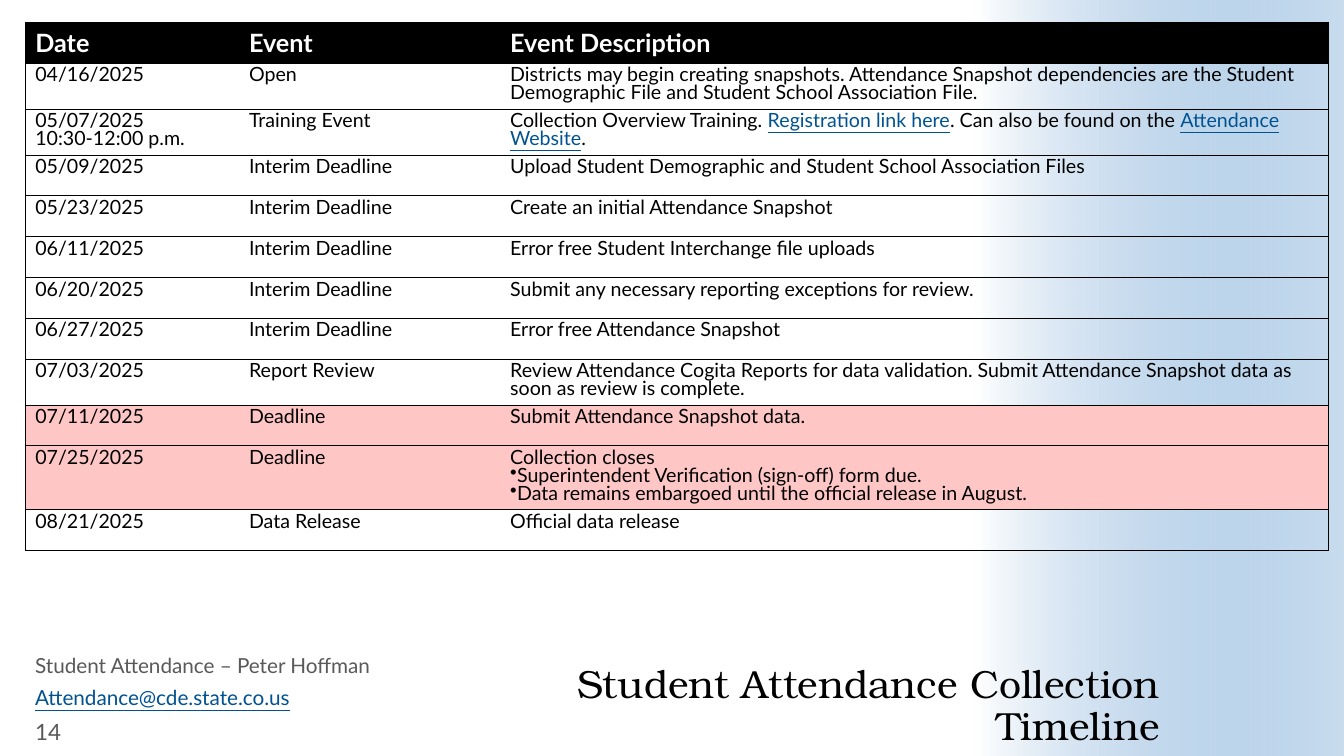
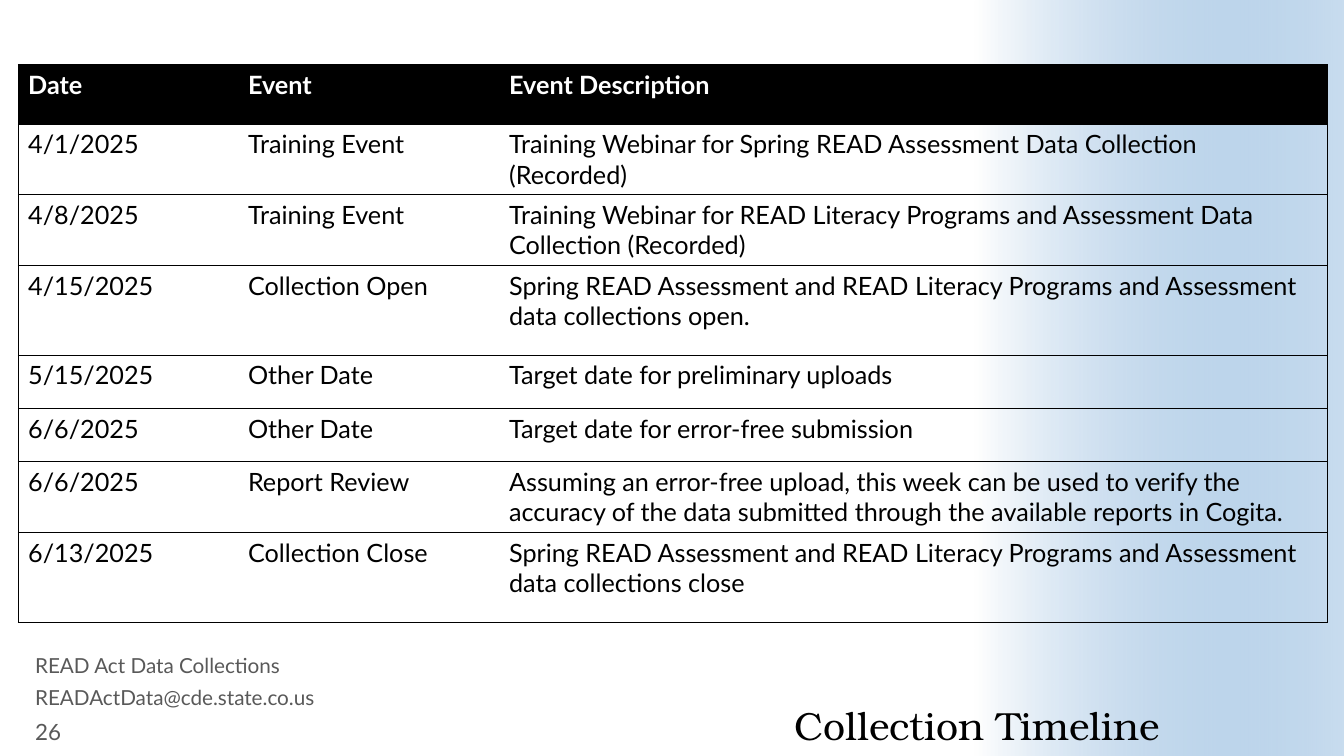
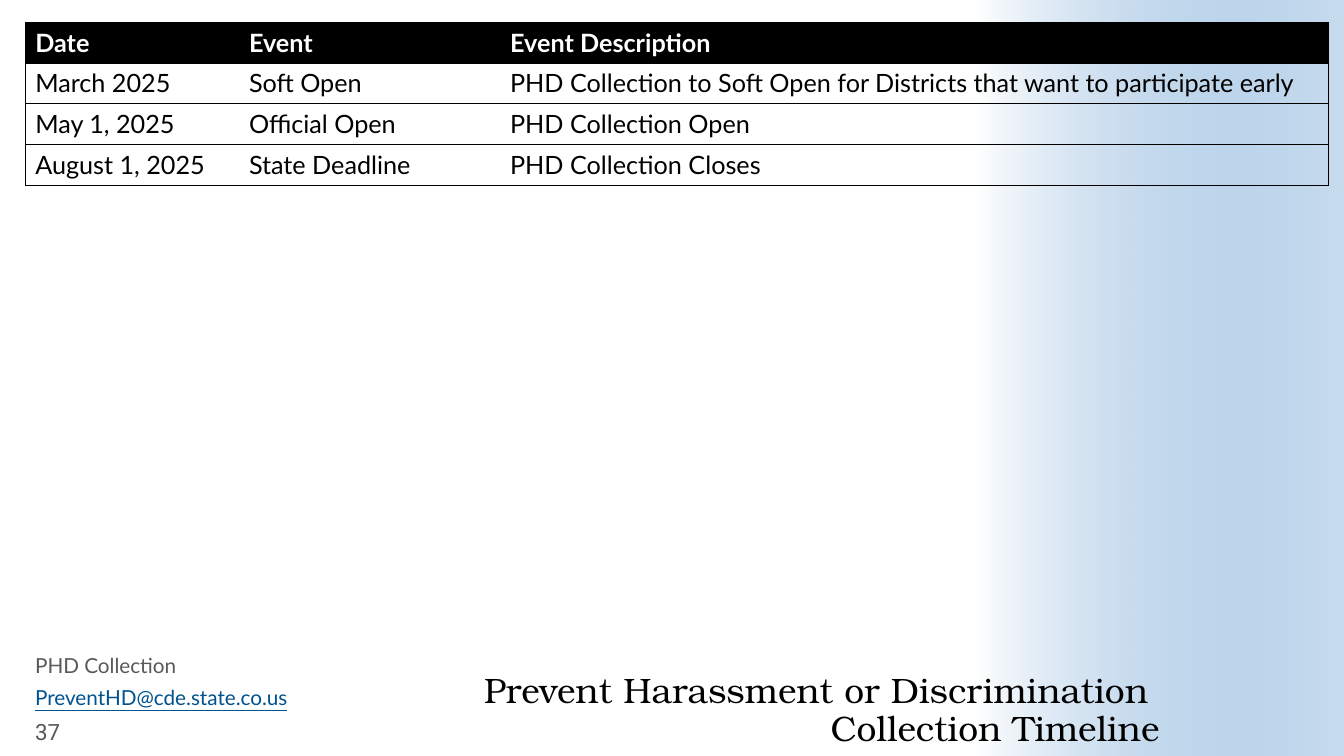
from lxml import etree
from pptx import Presentation
from pptx.dml.color import RGBColor
from pptx.enum import shapes, text
from pptx.oxml import ns
from pptx.util import Inches, Pt

HEADINGS = ("Date", "Event", "Event Description")
ROW_HEIGHT = 1.62 / 4

ATTENDANCE_EVENTS = [
    ("04/16/2025", "Open",
     "Districts may begin creating snapshots. Attendance Snapshot dependencies are "
     "the Student Demographic File and Student School Association File."),
    ("05/07/2025\n10:30-12:00 p.m.", "Training Event",
     "Collection Overview Training. [Registration link here]. Can also be found on "
     "the [Attendance Website]."),
    ("05/09/2025", "Interim Deadline",
     "Upload Student Demographic and Student School Association Files"),
    ("05/23/2025", "Interim Deadline", "Create an initial Attendance Snapshot"),
    ("06/11/2025", "Interim Deadline", "Error free Student Interchange file uploads"),
    ("06/20/2025", "Interim Deadline",
     "Submit any necessary reporting exceptions for review."),
    ("06/27/2025", "Interim Deadline", "Error free Attendance Snapshot"),
    ("07/03/2025", "Report Review",
     "Review Attendance Cogita Reports for data validation. Submit Attendance "
     "Snapshot data as soon as review is complete."),
    ("07/11/2025", "Deadline", "Submit Attendance Snapshot data."),
    ("07/25/2025", "Deadline",
     "Collection closes\n"
     "•Superintendent Verification (sign-off) form due.\n"
     "•Data remains embargoed until the official release in August."),
    ("08/21/2025", "Data Release", "Official data release"),
]

READ_EVENTS = [
    ("4/1/2025", "Training Event",
     "Training Webinar for Spring READ Assessment Data Collection (Recorded)"),
    ("4/8/2025", "Training Event",
     "Training Webinar for READ Literacy Programs and Assessment Data Collection "
     "(Recorded)"),
    ("4/15/2025", "Collection Open",
     "Spring READ Assessment and READ Literacy Programs and Assessment data "
     "collections open."),
    ("5/15/2025", "Other Date", "Target date for preliminary uploads"),
    ("6/6/2025", "Other Date", "Target date for error-free submission"),
    ("6/6/2025", "Report Review",
     "Assuming an error-free upload, this week can be used to verify the accuracy "
     "of the data submitted through the available reports in Cogita."),
    ("6/13/2025", "Collection Close",
     "Spring READ Assessment and READ Literacy Programs and Assessment data "
     "collections close"),
]

PHD_EVENTS = [
    ("March 2025", "Soft Open",
     "PHD Collection to Soft Open for Districts that want to participate early"),
    ("May 1, 2025", "Official Open", "PHD Collection Open"),
    ("August 1, 2025", "State Deadline", "PHD Collection Closes"),
]


def rgb(color):
    return RGBColor.from_string(color)


def sub(parent, tag, **attrs):
    return etree.SubElement(parent, ns.qn(tag), attrs)


class Deck:
    BLACK, WHITE, GREY = "000000", "FFFFFF", "595959"
    LINK, BAND, ALERT = "005390", "488BC9", "FFC6C6"
    BODY, TITLE = "Lato", "TeX Gyre Bonum"

    def __init__(self):
        self.prs = Presentation()
        self.prs.slide_width = Inches(13.33)
        self.prs.slide_height = Inches(7.5)

    def slide(self):
        self.s = self.prs.slides.add_slide(self.prs.slide_layouts[6])
        self.band()

    def band(self):
        """Gradient down the right edge, fading in from white."""
        sp = self.s.shapes.add_shape(shapes.MSO_SHAPE.RECTANGLE, Inches(7.75),
                                     Inches(1.92), Inches(7.5), Inches(3.66))
        sp.rotation = 270
        sp.shadow.inherit = False
        sp.line.fill.background()
        sp.fill.gradient()
        sp.fill.gradient_angle = 270
        for stop, color in zip(sp.fill.gradient_stops, (self.WHITE, self.BAND)):
            stop.color.rgb = rgb(color)
        colors = sp._element.spPr.findall(".//" + ns.qn("a:srgbClr"))
        sub(colors[-1], "a:alpha", val="30000")

    def add_text(self, p, content, size, color, font=None, bold=False):
        """Fill a paragraph; [text] in square brackets is styled as a link."""
        p.font.size, p.font.bold = Pt(size), bold
        p.font.name = font or self.BODY
        p.font.color.rgb = rgb(color)
        for i, part in enumerate(content.replace("]", "[").split("[")):
            if not part:
                continue
            r = p.add_run()
            r.text = part
            if i % 2:
                r.font.underline = True
                r.font.color.rgb = rgb(self.LINK)

    def text_box(self, x, y, w, h, anchor=text.MSO_ANCHOR.TOP):
        tf = self.s.shapes.add_textbox(*map(Inches, (x, y, w, h))).text_frame
        tf.word_wrap = True
        tf.vertical_anchor = anchor
        return tf

    def title(self, lines, size=28):
        tf = self.text_box(4.26, 6.45, 7.24, 0.98, text.MSO_ANCHOR.BOTTOM)
        tf.margin_left = tf.margin_right = tf.margin_top = tf.margin_bottom = 0
        p = tf.paragraphs[0]
        p.alignment = text.PP_ALIGN.RIGHT
        p.line_spacing = 0.9
        for i, line in enumerate(lines):
            if i:
                p.add_line_break()
            self.add_text(p, line, size, self.BLACK, self.TITLE)

    def footer(self, contact, email, number, number_font=None):
        for y, line in ((6.47, contact), (6.79, email)):
            p = self.text_box(0.25, y, 3.89, 0.31).paragraphs[0]
            p.line_spacing = 0.8
            self.add_text(p, line, 14.8, self.GREY)
        tf = self.text_box(0.25, 7.1, 0.85, 0.31, text.MSO_ANCHOR.MIDDLE)
        self.add_text(tf.paragraphs[0], number, 16, self.GREY, number_font)

    def borders(self, cell, left, right):
        """Rule above and below the cell, and at the sides asked for."""
        tcPr = cell._tc.get_or_add_tcPr()
        sides = {"a:lnL": left, "a:lnR": right, "a:lnT": True, "a:lnB": True}
        for tag, shown in sides.items():
            ln = sub(tcPr, tag, w=str(Pt(0.5)))
            if shown:
                sub(sub(ln, "a:solidFill"), "a:srgbClr", val=self.BLACK)
            else:
                sub(ln, "a:noFill")

    def cell(self, cell, content, size, spacing, header):
        tf = cell.text_frame
        for i, line in enumerate(content.split("\n")):
            p = tf.add_paragraph() if i else tf.paragraphs[0]
            if spacing:
                p.line_spacing = Pt(spacing)
            if line.startswith("•"):
                pPr = p._p.get_or_add_pPr()
                pPr.set("marL", "0")
                pPr.set("indent", "0")
                sub(pPr, "a:buChar", char="•")
            self.add_text(p, line.lstrip("•"), size,
                          self.WHITE if header else self.BLACK, bold=header)

    def timeline(self, events, x=0.25, y=0.22, date_width=2.12, heights=None,
                 size=18, spacing=None, alert=None):
        """Table of dates; rows whose event equals alert are tinted."""
        rows = [HEADINGS, *events]
        widths = (date_width, 2.59, 8.22)
        heights = heights or [ROW_HEIGHT] * len(rows)
        table = self.s.shapes.add_table(
            len(rows), len(widths), Inches(x), Inches(y),
            Inches(sum(widths)), Inches(sum(heights))).table
        table.first_row = table.horz_banding = False
        for column, width in zip(table.columns, widths):
            column.width = Inches(width)
        for r, (row, height) in enumerate(zip(rows, heights)):
            table.rows[r].height = Inches(height)
            header = r == 0
            fill = self.BLACK if header else self.ALERT if row[1] == alert else None
            for c, content in enumerate(row):
                cell = table.cell(r, c)
                self.borders(cell, c == 0, c == len(row) - 1)
                if fill:
                    cell.fill.solid()
                    cell.fill.fore_color.rgb = rgb(fill)
                else:
                    cell.fill.background()
                self.cell(cell, content, 18 if header else size,
                          None if header else spacing, header)


def main():
    deck = Deck()

    deck.slide()
    deck.title(["Student Attendance Collection Timeline"])
    deck.timeline(ATTENDANCE_EVENTS, size=14, spacing=12.8, alert="Deadline")
    deck.footer("Student Attendance – Peter Hoffman",
                "[Attendance@cde.state.co.us]", "14")

    deck.slide()
    deck.title(["Collection Timeline"])
    deck.timeline(READ_EVENTS, x=0.18, y=0.64, date_width=2.18,
                  heights=[0.59, 0.53, 0.53, 0.89, 0.53, 0.53, 0.53, 0.89])
    deck.footer("READ Act Data Collections", "READActData@cde.state.co.us", "26")

    deck.slide()
    deck.title(["Prevent Harassment or Discrimination ", "Collection Timeline"], 25.2)
    deck.timeline(PHD_EVENTS)
    deck.footer("PHD Collection", "[PreventHD@cde.state.co.us]", "37", "Roboto")

    deck.prs.save("out.pptx")


if __name__ == "__main__":
    main()
